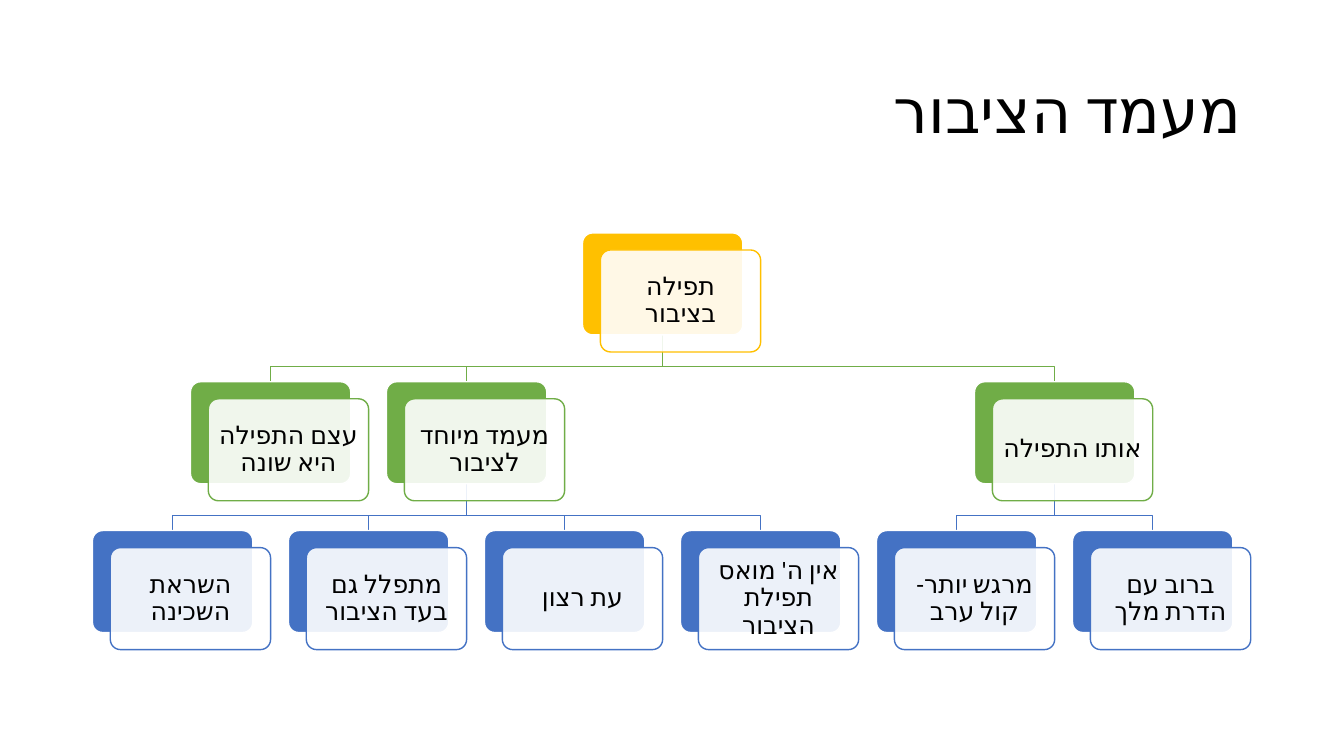
from dataclasses import dataclass

from lxml.etree import SubElement
from pptx import Presentation
from pptx.dml.color import RGBColor as RGB
from pptx.enum.shapes import MSO_SHAPE as Shape
from pptx.enum.text import MSO_ANCHOR as Anchor, MSO_AUTO_SIZE as AutoSize, PP_ALIGN as Align
from pptx.oxml.ns import qn
from pptx.util import Cm, Pt

# Content: (text, column, children), columns counted from the left
TITLE = "מעמד הציבור"
ROOT = ("תפילה בציבור", 2.5, [
    ("אותו התפילה", 4.5, [
        ("ברוב עם הדרת מלך", 5, []),
        ("מרגש יותר- קול ערב", 4, []),
    ]),
    ("מעמד מיוחד לציבור", 1.5, [
        ("אין ה' מואס תפילת הציבור", 3, []),
        ("עת רצון", 2, []),
        ("מתפלל גם בעד הציבור", 1, []),
        ("השראת השכינה", 0, []),
    ]),
    ("עצם התפילה היא שונה", 0.5, []),
])


@dataclass(frozen=True)
class Theme:
    font: str = "Calibri"
    ink: str = "000000"
    paper: str = "FFFFFF"
    levels: tuple = ("FFC000", "70AD47", "4472C4")
    title_size: int = 44
    card_size: int = 18
    line: float = 1
    card_opacity: int = 90


THEME = Theme()

# Tree grid, in centimetres
LEFT, TOP = 2.33, 5.87
COLUMN_STEP, ROW_STEP = 4.94, 3.75
CARD_W, CARD_H = 4.04, 2.57
SHIFT_X, SHIFT_Y = 0.45, 0.43
BRANCH_GAP = 0.38
PADDING = 0.18


def write(shape, text, *, size, align, color=THEME.ink):
    frame = shape.text_frame
    frame.word_wrap = True
    frame.auto_size = AutoSize.NONE
    frame.vertical_anchor = Anchor.MIDDLE
    paragraph = frame.paragraphs[0]
    paragraph.alignment = align
    paragraph.line_spacing = 0.9
    paragraph._p.get_or_add_pPr().set("rtl", "1")
    run = paragraph.add_run()
    run.text = text
    run.font.size = Pt(size)
    run.font.name = THEME.font
    run.font.color.rgb = RGB.from_string(color)
    properties = run._r.get_or_add_rPr()
    properties.set("lang", "he-IL")
    SubElement(properties, qn("a:cs"), typeface=THEME.font)


def corner(column, level):
    return LEFT + column * COLUMN_STEP, TOP + level * ROW_STEP


def walk(node, level=0):
    yield node, level
    for child in node[2]:
        yield from walk(child, level + 1)


def add_branch(slide, parent_column, child_column, level):
    """Draw the bent line from a parent down to a child on the given level."""
    parent_x, parent_y = corner(parent_column, level - 1)
    child_x, child_y = corner(child_column, level)
    start_x, end_x = parent_x + CARD_W / 2, child_x + CARD_W / 2
    bend_y = child_y - BRANCH_GAP
    builder = slide.shapes.build_freeform(Cm(start_x), Cm(parent_y + CARD_H))
    builder.add_line_segments(
        [(Cm(start_x), Cm(bend_y)), (Cm(end_x), Cm(bend_y)), (Cm(end_x), Cm(child_y))],
        close=False)
    branch = builder.convert_to_shape()
    branch.shadow.inherit = False
    branch.fill.background()
    branch.line.color.rgb = RGB.from_string(THEME.levels[level])
    branch.line.width = Pt(THEME.line)


def add_panel(slide, x, y, fill, line):
    panel = slide.shapes.add_shape(
        Shape.ROUNDED_RECTANGLE, Cm(x), Cm(y), Cm(CARD_W), Cm(CARD_H))
    panel.adjustments[0] = 0.1
    panel.shadow.inherit = False
    panel.fill.solid()
    panel.fill.fore_color.rgb = RGB.from_string(fill)
    panel.line.color.rgb = RGB.from_string(line)
    panel.line.width = Pt(THEME.line)
    return panel


def add_card(slide, text, column, level):
    x, y = corner(column, level)
    accent = THEME.levels[level]
    add_panel(slide, x, y, accent, THEME.paper)
    front = add_panel(slide, x + SHIFT_X, y + SHIFT_Y, THEME.paper, accent)
    paper = front.fill._xPr.find(qn("a:solidFill"))[0]
    SubElement(paper, qn("a:alpha"), val=str(THEME.card_opacity * 1000))
    frame = front.text_frame
    frame.margin_left = frame.margin_right = Cm(PADDING)
    frame.margin_top = frame.margin_bottom = Cm(PADDING)
    write(front, text, size=THEME.card_size, align=Align.CENTER)


def main():
    deck = Presentation()
    deck.slide_width, deck.slide_height = Cm(33.87), Cm(19.05)
    slide = deck.slides.add_slide(deck.slide_layouts[5])

    # Title
    title = slide.shapes.title
    title.left, title.top, title.width, title.height = Cm(2.33), Cm(1.01), Cm(29.21), Cm(3.68)
    write(title, TITLE, size=THEME.title_size, align=Align.RIGHT)

    # Branches lie behind the cards
    for (_, column, children), level in walk(ROOT):
        for _, child_column, _ in children:
            add_branch(slide, column, child_column, level + 1)

    # Cards
    for (text, column, _), level in walk(ROOT):
        add_card(slide, text, column, level)

    deck.save("out.pptx")


if __name__ == "__main__":
    main()
